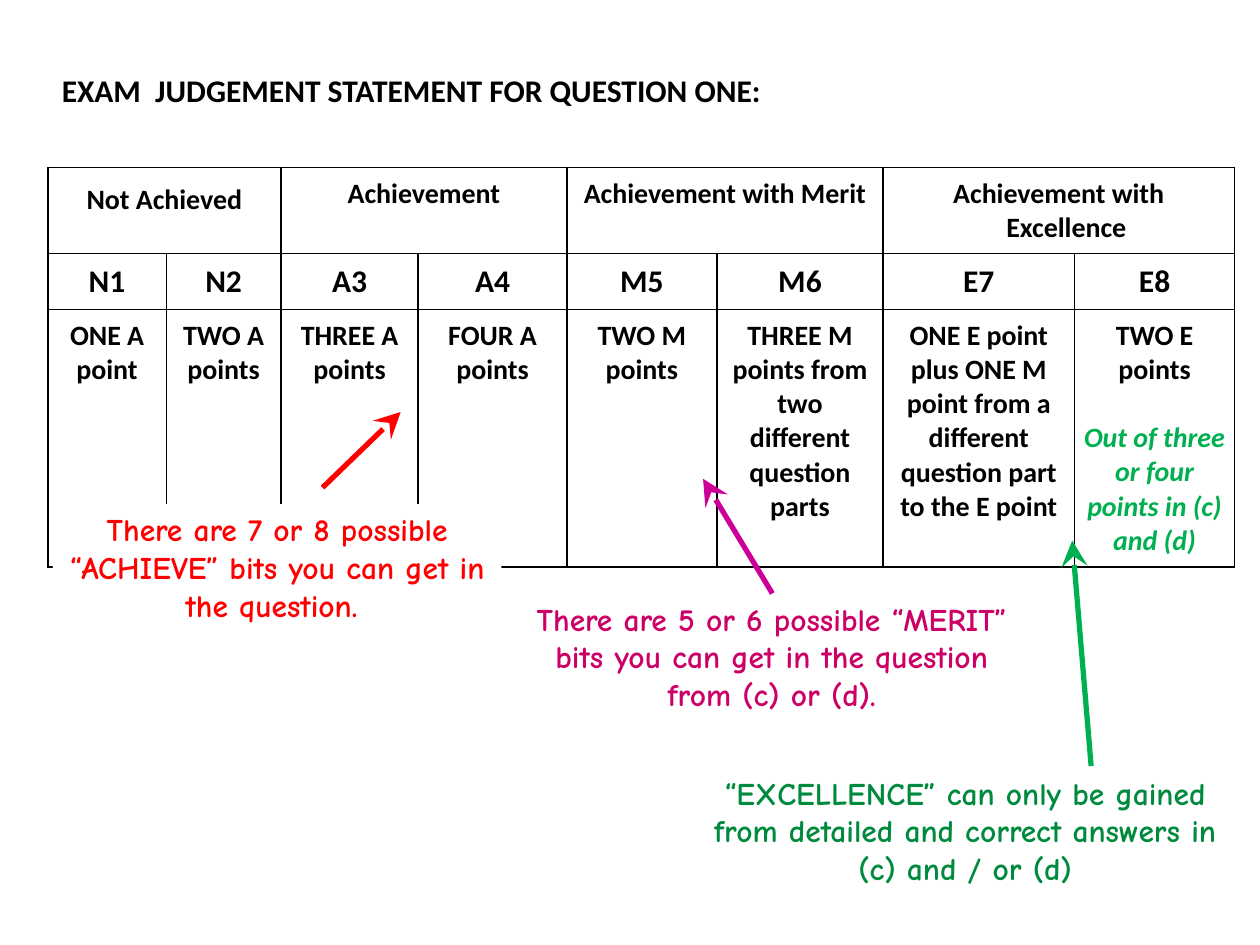
"""Build a slide that explains how exam points turn into grades."""
from dataclasses import dataclass

from lxml import etree
from pptx import Presentation
from pptx import util as u
from pptx.dml.color import RGBColor
from pptx.enum import shapes, text
from pptx.oxml import ns


@dataclass(frozen=True)
class Theme:
    """Colours, fonts, type sizes and line widths."""
    ink: str = "000000"
    paper: str = "FFFFFF"
    red: str = "FF0000"
    pink: str = "CC0066"
    plum: str = "CC0099"
    green: str = "00B050"
    pine: str = "008A3E"
    font: str = "Calibri"
    hand: str = "Comic Neue"
    small: int = 16
    large: int = 18
    rule: int = 1
    arrow: int = 3


T = Theme()
COLS, ROWS = 100, 75
WIDTHS = 9.4, 9.1, 10.9, 11.8, 11.9, 13.2, 15.2, 12.7
HEIGHTS = 6.7, 4.4, 20.3
HEADS = (("Not Achieved", 1.2, 0), ("Achievement", 1, 1.2),
         ("Achievement with Merit", 1, 1.4), ("Achievement with Excellence", 1, 1.2))
GRADES = "N1", "N2", "A3", "A4", "M5", "M6", "E7", "E8"
RULES = ("ONE A point", "TWO A points", "THREE A points", "FOUR A points", "TWO M points",
         "THREE M points from two different question parts",
         "ONE E point plus ONE M point from a different question part to the E point",
         "TWO E points")
NOTES = (
    ("There are 7 or 8 possible “ACHIEVE” bits you can get in the question. ",
     (4.2, 40, 35.6, 10.1), T.red, T.paper),
    ("There are 5 or 6 possible “MERIT” bits you can get in the question from (c) or (d).",
     (41.4, 47.1, 39.7, 10.1), T.pink, None),
    ("“EXCELLENCE” can only be gained from detailed and correct answers in (c) and / or (d)",
     (54.7, 60.9, 43.8, 10.1), T.pine, None),
)
ARROWS = (((25.6, 38.7), (31.8, 32.7), T.red),
          ((61.3, 47.1), (55.8, 38), T.plum),
          ((86.6, 60.8), (85.1, 42.9), T.green))


def grid(*vals):
    """Turn grid units, a hundredth of the slide width each, into lengths."""
    return [u.Inches(10 * v / COLS) for v in vals]


def tint(hue):
    """Return the colour for a hex string."""
    return RGBColor.from_string(hue)


def write(frame, words, *, size=T.large, font=T.font, hue=T.ink, italic=False,
          align=text.PP_ALIGN.CENTER, gap=0, before=None, lead=1, hang=0, more=False):
    """Write one bold paragraph into a text frame."""
    para = frame.add_paragraph() if more else frame.paragraphs[0]
    para.alignment, para.line_spacing = align, lead
    para.space_before = u.Pt(gap if before is None else before)
    para.space_after = u.Pt(gap)
    if hang:
        props = para._p.get_or_add_pPr()
        props.set("marL", str(grid(hang)[0]))
        props.set("indent", str(-grid(hang)[0]))
    run = para.add_run()
    run.text = words
    run.font.size, run.font.name = u.Pt(size), font
    run.font.bold, run.font.italic = True, italic
    run.font.color.rgb = tint(hue)


def edge(cell):
    """Clear a cell's fill and rule all four of its sides."""
    props = cell._tc.get_or_add_tcPr()
    for side in ("a:lnL", "a:lnR", "a:lnT", "a:lnB"):
        line = etree.SubElement(props, ns.qn(side), w=str(u.Pt(T.rule)))
        fill = etree.SubElement(line, ns.qn("a:solidFill"))
        etree.SubElement(fill, ns.qn("a:srgbClr"), val=T.ink)
    cell.fill.background()


def title(slide, words):
    """Place the heading in the title placeholder."""
    box = slide.shapes.title
    box.left, box.top, box.width, box.height = grid(3.9, 5.1, 57.8, 4)
    frame = box.text_frame
    frame.word_wrap = False
    frame.auto_size = text.MSO_AUTO_SIZE.NONE
    frame.vertical_anchor = text.MSO_ANCHOR.TOP
    write(frame, words, align=text.PP_ALIGN.LEFT)


def table(slide):
    """Add the table of grades and the points they need."""
    spot = grid(3.8, 13.3, sum(WIDTHS), sum(HEIGHTS))
    tab = slide.shapes.add_table(len(HEIGHTS), len(WIDTHS), *spot).table
    tab.first_row = tab.horz_banding = False
    for col, wide in zip(tab.columns, grid(*WIDTHS)):
        col.width = wide
    for row, high in zip(tab.rows, grid(*HEIGHTS)):
        row.height = high
    for cell in tab.iter_cells():
        edge(cell)
        cell.margin_left, cell.margin_top = grid(0.6, 0.7)
        cell.margin_right, cell.margin_bottom = grid(0.6, 0.7)
    for i, (head, lead, hang) in enumerate(HEADS):
        cell = tab.cell(0, 2 * i)
        cell.merge(tab.cell(0, 2 * i + 1))
        write(cell.text_frame, head, size=T.small, gap=3, lead=lead, hang=hang)
    for i, (grade, rule) in enumerate(zip(GRADES, RULES)):
        write(tab.cell(1, i).text_frame, grade, gap=3)
        write(tab.cell(2, i).text_frame, rule, size=T.small)
    write(tab.cell(2, 7).text_frame, "Out of three or four points in (c) and (d)",
          size=T.small, hue=T.green, italic=True, before=19.5, more=True)


def note(slide, words, spot, hue, fill):
    """Add a handwritten remark, on a plain ground if a fill is given."""
    box = slide.shapes.add_textbox(*grid(*spot))
    if fill:
        box.fill.solid()
        box.fill.fore_color.rgb = tint(fill)
    box.text_frame.word_wrap = True
    write(box.text_frame, words, font=T.hand, hue=hue)


def arrow(slide, start, end, hue):
    """Draw a straight arrow from start to end."""
    line = slide.shapes.add_connector(shapes.MSO_CONNECTOR.STRAIGHT, *grid(*start, *end))
    line.line.color.rgb = tint(hue)
    line.line.width = u.Pt(T.arrow)
    etree.SubElement(line.line._get_or_add_ln(), ns.qn("a:tailEnd"), type="stealth",
                     w="lg", len="lg")
    etree.SubElement(line._element.spPr, ns.qn("a:effectLst"))


def main():
    """Build and save the slide."""
    deck = Presentation()
    deck.slide_width, deck.slide_height = grid(COLS, ROWS)
    slide = deck.slides.add_slide(deck.slide_layouts.get_by_name("Title Only"))
    table(slide)
    title(slide, "EXAM  JUDGEMENT STATEMENT FOR QUESTION ONE:")
    for item in NOTES:
        note(slide, *item)
    for item in ARROWS:
        arrow(slide, *item)
    deck.save("out.pptx")


if __name__ == "__main__":
    main()
